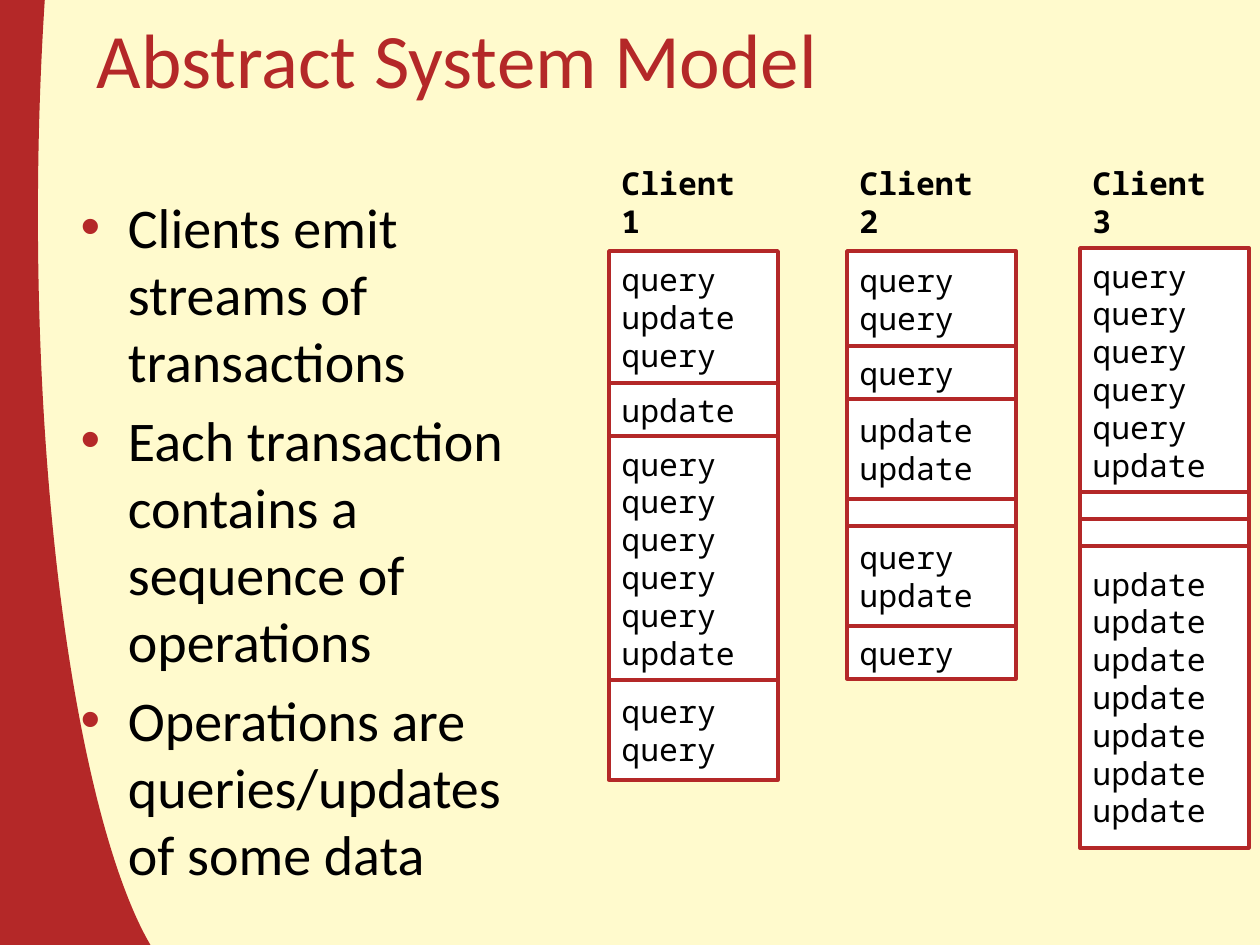
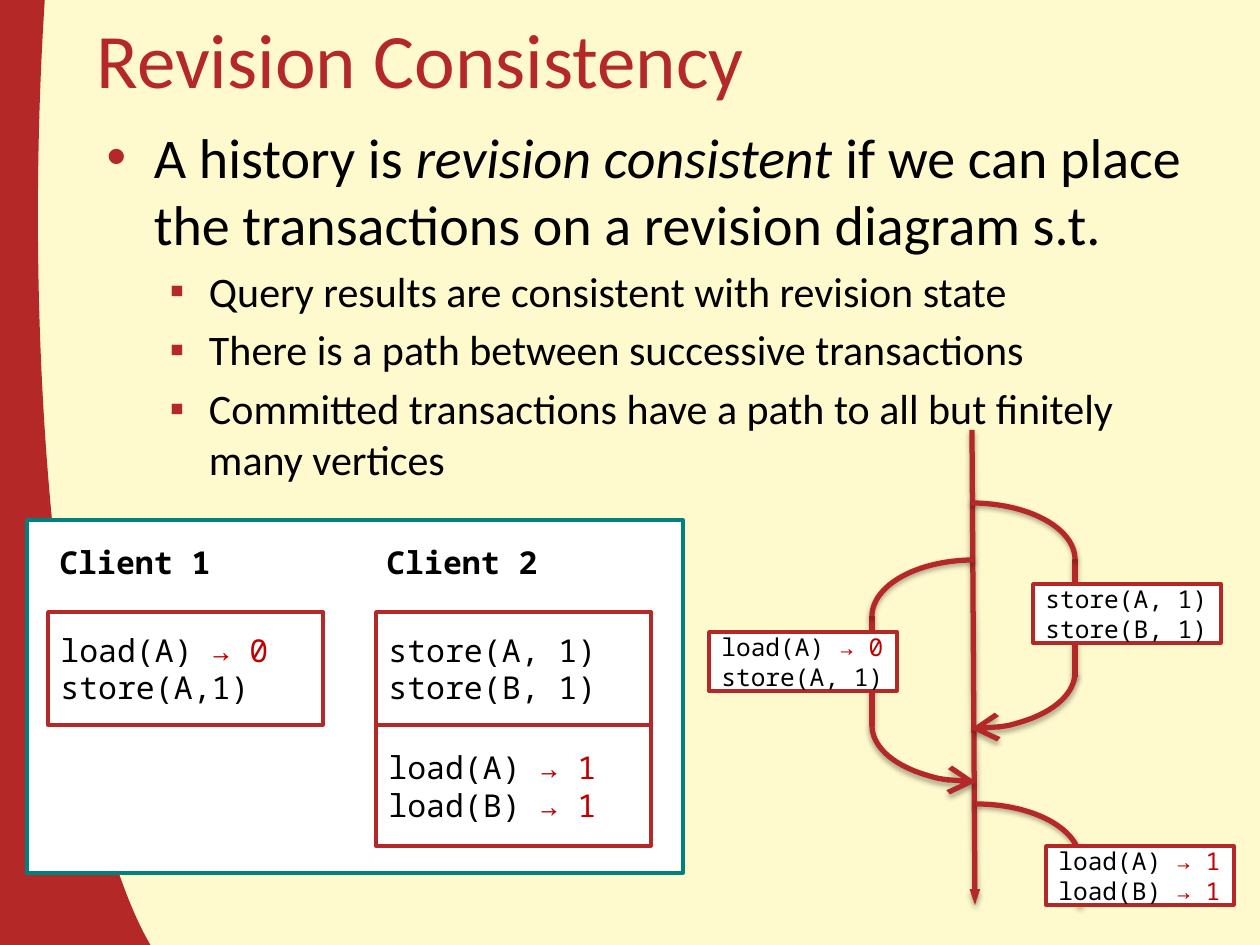
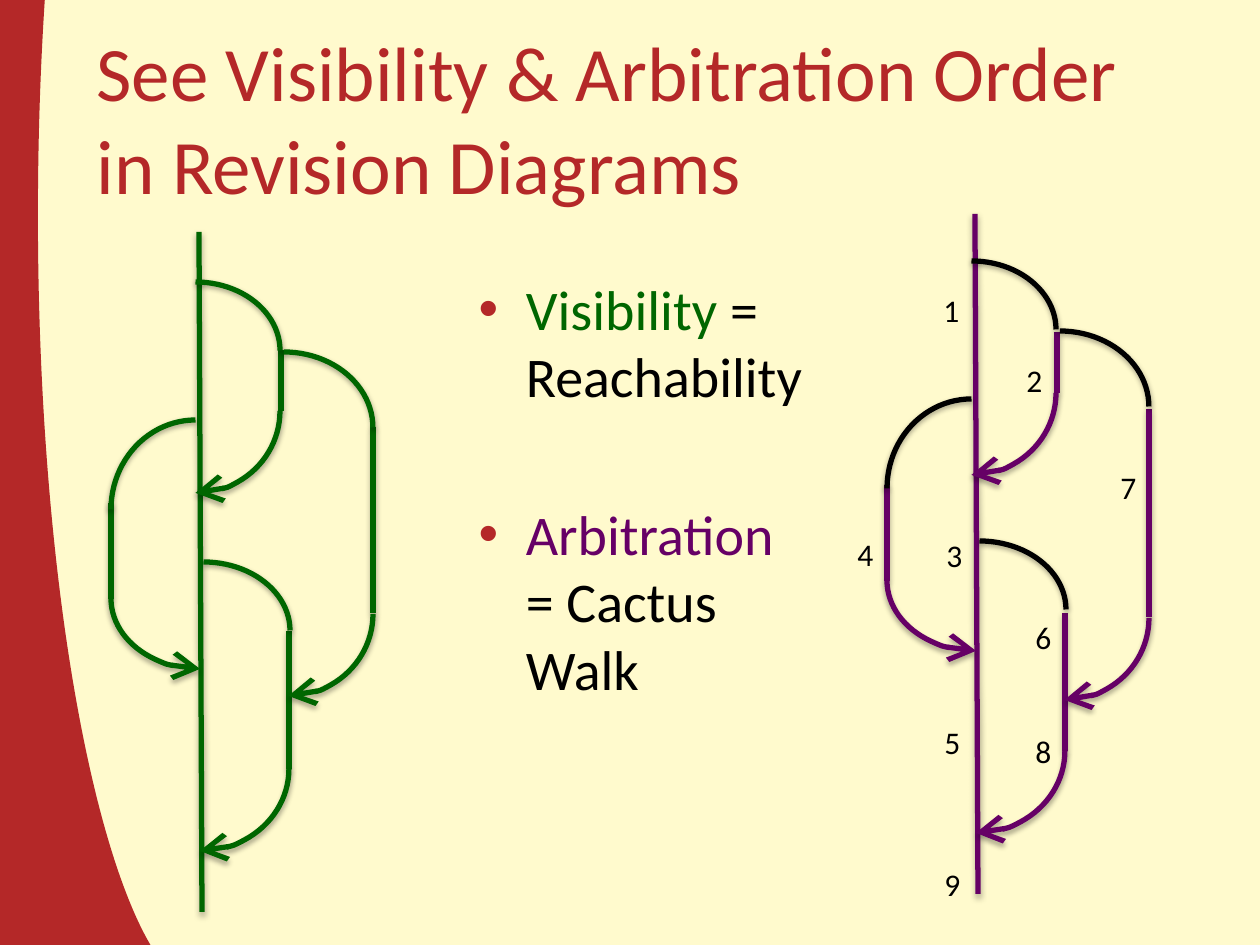
import pptx
import pptx.dml.color
import pptx.enum.shapes
import pptx.enum.text
import pptx.oxml
import pptx.oxml.ns
import pptx.util

RGB = pptx.dml.color.RGBColor
CREAM = RGB(0xFF, 0xFA, 0xCD)
CRIMSON = RGB(0xB4, 0x28, 0x28)
RESULT_RED = RGB(0xC0, 0x00, 0x00)
TEAL = RGB(0x00, 0x80, 0x80)
GREEN = RGB(0x00, 0x66, 0x00)
PURPLE = RGB(0x66, 0x00, 0x66)
BLACK = RGB(0x00, 0x00, 0x00)
WHITE = RGB(0xFF, 0xFF, 0xFF)

TEXT_FONT = "Calibri"
CODE_FONT = "Noto Sans Mono"
SHAPES = pptx.enum.shapes.MSO_SHAPE
ANCHOR = pptx.enum.text.MSO_ANCHOR
ALIGN = pptx.enum.text.PP_ALIGN
NO_FIT = pptx.enum.text.MSO_AUTO_SIZE.NONE
NAMESPACE = pptx.oxml.ns.nsdecls("a")
SHADOW = (
    f'<a:effectLst {NAMESPACE}><a:outerShdw blurRad="40000" dist="23000" dir="5400000" '
    'rotWithShape="0"><a:srgbClr val="000000"><a:alpha val="35000"/></a:srgbClr>'
    "</a:outerShdw></a:effectLst>"
)
PX_PER_INCH = 126

# Arrowheads as type, width, length
MERGE_HEAD = ("arrow", "lg", "lg")
TRUNK_HEAD = ("triangle", "sm", "med")

# Height of a transaction box by its number of operations
STACK_HEIGHTS = {0: 27, 1: 53, 2: 100, 3: 132, 6: 244, 7: 302}


def px(length):
    return pptx.util.Emu(round(length * 914400 / PX_PER_INCH))


def assign(target, values):
    for name, value in values.items():
        setattr(target, name, value)


def place(shape, box):
    assign(shape, dict(zip(("left", "top", "width", "height"), map(px, box))))


def add_element(parent, xml):
    parent.append(pptx.oxml.parse_xml(xml))


def write_spans(para, spans, **shared):
    """Add (text, format) spans; a format may hold a colour besides font attributes."""
    for text, extra in spans:
        span = para.add_run()
        span.text = text
        values = {**shared, **extra}
        colour = values.pop("colour", None)
        if colour is not None:
            span.font.color.rgb = colour
        assign(span.font, values)


def style_master(deck):
    master = deck.slide_master
    master.background.fill.solid()
    master.background.fill.fore_color.rgb = CREAM
    styles = master.element.find(pptx.oxml.ns.qn("p:txStyles"))

    def level(style, number):
        return styles.find(pptx.oxml.ns.qn(f"p:{style}")).find(pptx.oxml.ns.qn(f"a:lvl{number}pPr"))

    title = level("titleStyle", 1)
    title.set("algn", "l")
    for colour in title.iter(pptx.oxml.ns.qn("a:solidFill")):
        colour.clear()
        add_element(colour, f'<a:srgbClr {NAMESPACE} val="{CRIMSON}"/>')
    for number, bullet, size in ((1, "•", 32), (2, "▪", 24)):
        style = level("bodyStyle", number)
        style.find(pptx.oxml.ns.qn("a:buFont")).addprevious(pptx.oxml.parse_xml(
            f'<a:buClr {NAMESPACE}><a:srgbClr val="{CRIMSON}"/></a:buClr>'))
        style.find(pptx.oxml.ns.qn("a:buChar")).set("char", bullet)
        style.find(pptx.oxml.ns.qn("a:defRPr")).set("sz", str(size * 100))


def add_swoosh(deck, page):
    """Draw the thick side arc and hand it to the master, behind everything."""
    swoosh = add_arc(page, (-32, -609, 388, 1648), "h", CRIMSON, 80, shadow=False)
    for index, degrees in enumerate((296.11, 92.23)):
        swoosh.adjustments[index] = degrees * 60000 / 100000
    deck.slide_master.shapes.element.insert(2, swoosh.element)


def add_page(deck, title, body_box, items, title_height=158):
    """Items are (level, spans, space before in points or None)."""
    page = deck.slides.add_slide(deck.slide_layouts[1])
    heading, body = page.shapes.title, page.placeholders[1]
    place(heading, (84, -21, 1134, title_height))
    place(body, body_box)
    heading.text_frame.text = title
    for shape in (heading, body):
        shape.text_frame.auto_size = NO_FIT
    for index, (level, spans, gap) in enumerate(items):
        frame = body.text_frame
        para = frame.add_paragraph() if index else frame.paragraphs[0]
        para.level = level
        if gap is not None:
            para.space_before = pptx.util.Pt(gap)
        write_spans(para, spans)
    return page


def add_panel(page, box, line_colour):
    panel = page.shapes.add_shape(SHAPES.RECTANGLE, *map(px, box))
    panel.shadow.inherit = False
    panel.fill.solid()
    panel.fill.fore_color.rgb = WHITE
    panel.line.color.rgb = line_colour
    panel.line.width = pptx.util.Pt(2)
    return panel


def add_code_box(page, box, lines, size=18):
    """Boxed operations; whatever follows an arrow sign is a red result."""
    frame = add_panel(page, box, CRIMSON).text_frame
    assign(frame, {"word_wrap": True, "vertical_anchor": ANCHOR.MIDDLE})
    for index, line in enumerate(lines):
        para = frame.add_paragraph() if index else frame.paragraphs[0]
        para.alignment = ALIGN.LEFT
        call, arrow, result = line.partition("→")
        spans = [(call, {"colour": BLACK})]
        if arrow:
            spans.append((arrow + result, {"colour": RESULT_RED}))
        write_spans(para, spans, name=CODE_FONT, size=pptx.util.Pt(size))


def add_label(page, box, text, wrap=True, anchor=ANCHOR.MIDDLE, **font):
    frame = page.shapes.add_textbox(*map(px, box)).text_frame
    assign(frame, {"word_wrap": wrap, "vertical_anchor": anchor})
    write_spans(frame.paragraphs[0], [(text, font)], size=pptx.util.Pt(18), colour=BLACK)


def add_client_name(page, box, number):
    add_label(page, box, f"Client {number}", name=CODE_FONT, bold=True)


def style_stroke(shape, colour, width=3, shadow=True, **ends):
    """Ends give the arrowhead for headEnd or tailEnd."""
    shape.line.color.rgb = colour
    shape.line.width = pptx.util.Pt(width)
    properties = shape.element.spPr
    for end, (kind, breadth, length) in ends.items():
        add_element(properties.find(pptx.oxml.ns.qn("a:ln")),
                    f'<a:{end} {NAMESPACE} type="{kind}" w="{breadth}" len="{length}"/>')
    add_element(properties, SHADOW if shadow else f"<a:effectLst {NAMESPACE}/>")


def add_arc(page, box, flips, colour, width=3, shadow=True, **ends):
    arc = page.shapes.add_shape(SHAPES.ARC, *map(px, box))
    arc.fill.background()
    for flip in flips:
        arc.element.spPr.xfrm.set(f"flip{flip.upper()}", "1")
    style_stroke(arc, colour, width, shadow, **ends)
    return arc


def add_strand(page, points, colour, **ends):
    strand = page.shapes.add_connector(
        pptx.enum.shapes.MSO_CONNECTOR.STRAIGHT, *map(px, points))
    style_stroke(strand, colour, **ends)


def draw_revisions(page, origin, colour, fork_colour, trunk, strands, forks, merges, **trunk_ends):
    """Forks and merges are (x, y, width, height, flips) from the origin."""
    left, top = origin

    def shifted(box):
        x, y, width, height = box
        return left + x, top + y, width, height

    def moved(points):
        return [value + shift for value, shift in zip(points, (left, top, left, top))]

    add_strand(page, moved(trunk), colour, **trunk_ends)
    for strand in strands:
        add_strand(page, moved(strand), colour)
    for *box, flips in merges:
        add_arc(page, shifted(box), flips, colour, headEnd=MERGE_HEAD)
    for *box, flips in forks:
        add_arc(page, shifted(box), flips, fork_colour)


def draw_client_stack(page, left, top, number, transactions, first_height=None):
    width = 169
    add_client_name(page, (left, 155, width, 93), number)
    for index, transaction in enumerate(transactions):
        operations = transaction.split()
        height = STACK_HEIGHTS[len(operations)]
        if index == 0 and first_height:
            height = first_height
        add_code_box(page, (left, top, width, height), operations)
        top += height


def draw_history_panel(page, left, top):
    add_panel(page, (left, top, 656, 353), TEAL)
    for number, x in ((1, 20), (2, 347)):
        add_client_name(page, (left + x, top - 1, 276, 86), number)
    for x, y, height, lines in (
        (21, 92, 113, ["load(A) → 0", "store(A,1)"]),
        (349, 92, 113, ["store(A, 1)", "store(B, 1)"]),
        (349, 205, 121, ["load(A) → 1", "load(B) → 1"]),
    ):
        add_code_box(page, (left + x, top + y, 275, height), lines)


def draw_history_diagram(page, left, top):
    draw_revisions(
        page, (left, top), CRIMSON, CRIMSON,
        trunk=(105, 0, 108, 475),
        strands=[(208, 129, 208, 247), (5, 186, 5, 296), (213, 431, 213, 476)],
        forks=[(0, 73, 208, 113, ""), (5, 130, 204, 113, "h"), (5, 374, 208, 113, "")],
        merges=[(0, 186, 208, 113, "v"), (5, 239, 208, 113, "hv")],
        tailEnd=TRUNK_HEAD,
    )
    for x, y, lines in (
        (-158, 202, ["load(A) → 0", "store(A, 1)"]),
        (166, 154, ["store(A, 1)", "store(B, 1)"]),
        (179, 416, ["load(A) → 1", "load(B) → 1"]),
    ):
        add_code_box(page, (left + x, top + y, 188, 59), lines, size=14)


def draw_order_diagram(page, origin, colour, fork_colour, fork_lift=0, outer_drop=0):
    """Five revisions; the outer one may merge lower, and forks may sit higher."""
    forks = [(0, 50, 169, 137, ""), (0, 188, 169, 179, "h"),
             (84, 120, 178, 151, ""), (6, 330, 173, 137, "")]
    draw_revisions(
        page, origin, colour, fork_colour,
        trunk=(88, 0, 91, 680),
        strands=[(170, 118, 170, 179), (0, 271, 0, 367),
                 (262, 195, 262, 381 + outer_drop), (178, 399, 178, 537)],
        forks=[(x, y - fork_lift, *rest) for x, y, *rest in forks],
        merges=[(0, 97, 169, 164, "v"), (0, 296, 178, 141, "hv"),
                (93, 300 + outer_drop, 169, 164, "v"), (0, 455, 178, 164, "v")],
    )


def number_walk(page, left, top):
    steps = [(44, 71), (127, 141), (47, 316), (-42, 315), (45, 503),
             (136, 398), (221, 248), (136, 512), (45, 645)]
    for number, (x, y) in enumerate(steps, 1):
        add_label(page, (left + x, top + y, 42, 50), str(number),
                  wrap=False, anchor=ANCHOR.TOP, name=TEXT_FONT)


def build_model_page(deck):
    page = add_page(deck, "Abstract System Model", (68, 186, 466, 719), [
        (0, [(text, {})], None) for text in (
            "Clients emit streams of transactions",
            "Each transaction contains a sequence of operations",
            "Operations are queries/updates of some data",
        )])
    add_swoosh(deck, page)
    long_transaction = "query " * 5 + "update"
    draw_client_stack(page, 609, 251, 1, [
        "query update query", "update", long_transaction, "query query"])
    draw_client_stack(page, 847, 251, 2, [
        "query query", "query", "update update", "", "query update", "query"], first_height=95)
    draw_client_stack(page, 1080, 248, 3, [long_transaction, "", "", "update " * 7])


def build_consistency_page(deck):
    definition = [
        ("A history is ", {}),
        ("revision consistent ", {"italic": True}),
        ("if we can place the transactions on a revision diagram s.t.", {}),
    ]
    conditions = [
        "Query results are consistent with revision state",
        "There is a path between successive transactions",
        "Committed transactions have a path to all but finitely many vertices",
    ]
    page = add_page(deck, "Revision Consistency", (94, 116, 1108, 796),
                    [(0, definition, None)] + [(1, [(text, {})], None) for text in conditions])
    draw_history_panel(page, 27, 520)
    draw_history_diagram(page, 867, 430)


def build_order_page(deck):
    page = add_page(
        deck, "See Visibility & Arbitration Order\vin Revision Diagrams", (466, 268, 350, 606),
        [(0, [("Visibility", {"colour": GREEN}), (" = Reachability", {})], None),
         (0, [("Arbitration ", {"colour": PURPLE}), ("= Cactus Walk", {})], 52)],
        title_height=276)
    draw_order_diagram(page, (111, 232), GREEN, GREEN)
    walk_origin = (887, 214)
    draw_order_diagram(page, walk_origin, PURPLE, BLACK, fork_lift=3, outer_drop=22)
    number_walk(page, *walk_origin)


def main():
    deck = pptx.Presentation()
    assign(deck, {"slide_width": px(1260), "slide_height": px(945)})
    style_master(deck)
    build_model_page(deck)
    build_consistency_page(deck)
    build_order_page(deck)
    deck.save("out.pptx")


if __name__ == "__main__":
    main()
